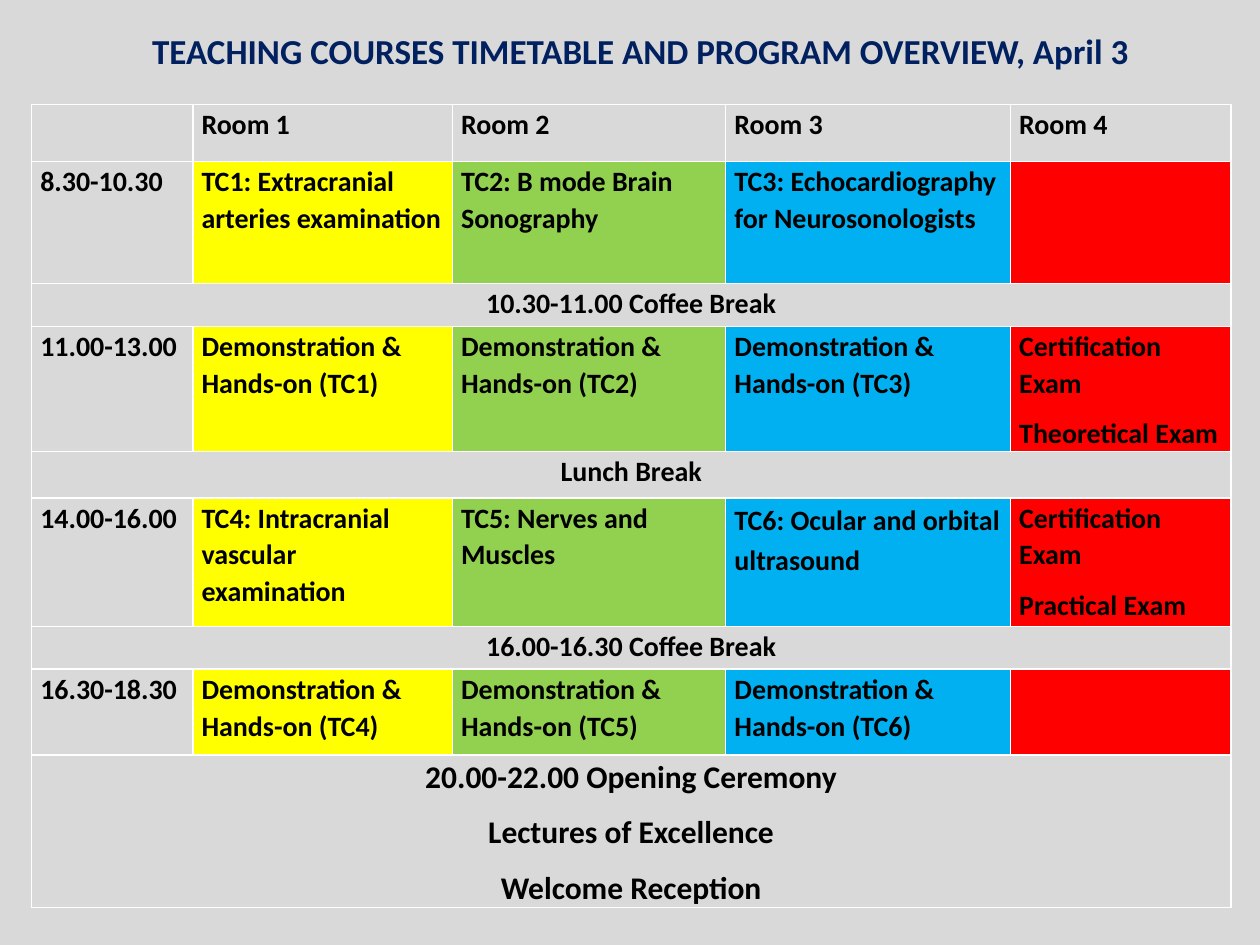
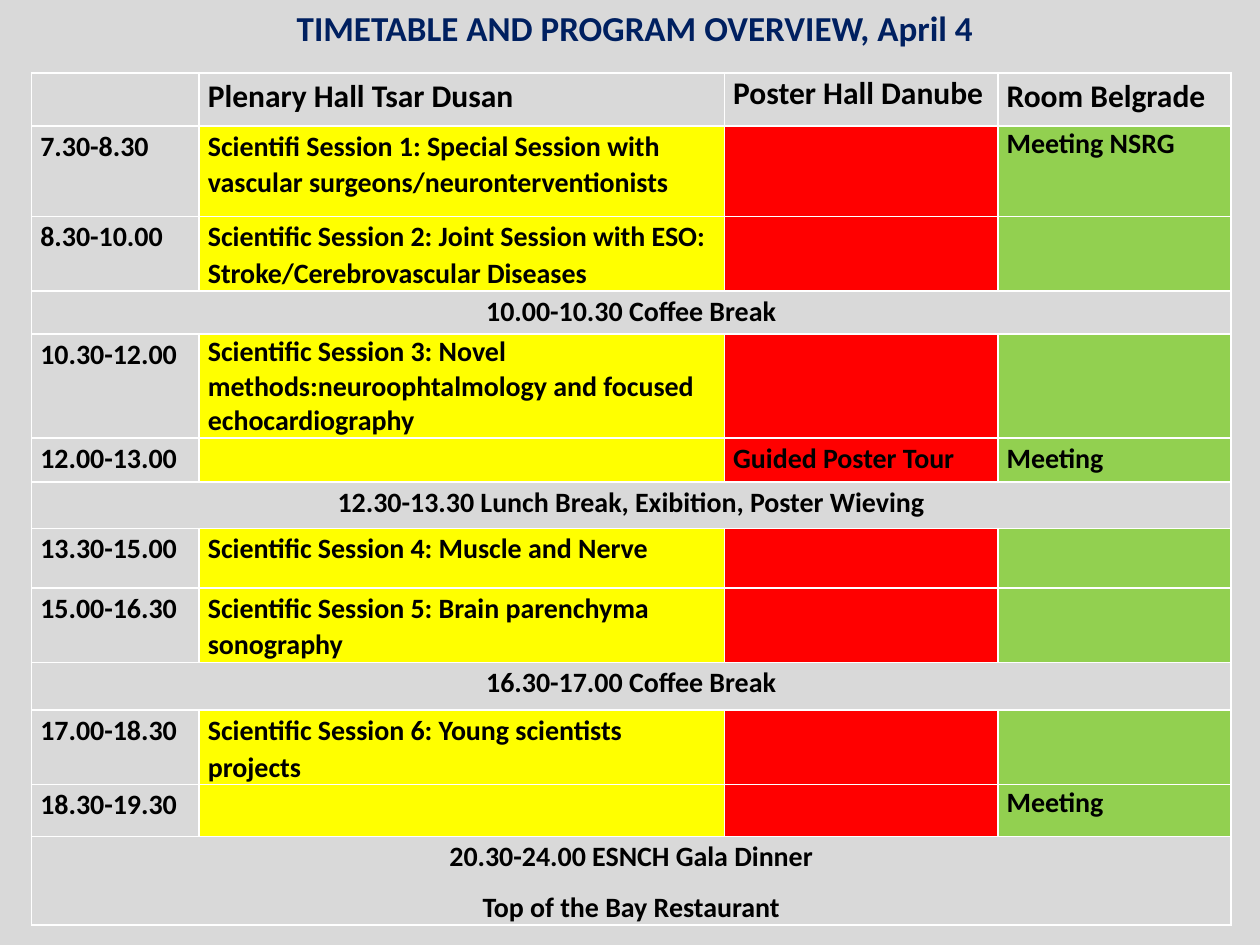
from lxml.etree import SubElement
from pptx import Presentation
from pptx.dml.color import RGBColor
from pptx.enum.text import MSO_ANCHOR, PP_ALIGN
from pptx.oxml.ns import qn
from pptx.util import Inches, Pt

GREY = RGBColor(0xD9, 0xD9, 0xD9)
YELLOW = RGBColor(0xFF, 0xFF, 0x00)
GREEN = RGBColor(0x92, 0xD0, 0x50)
BLUE = RGBColor(0x00, 0xB0, 0xF0)
RED = RGBColor(0xFF, 0x00, 0x00)
NAVY = RGBColor(0x00, 0x20, 0x60)
BLACK = RGBColor(0, 0, 0)
WHITE = RGBColor(0xFF, 0xFF, 0xFF)

FONT = "Calibri"
TEXT_SIZE, TITLE_SIZE = 16, 20
TABLE_LEFT = 0.25
CELL_MARGINS = {"margin_left": Inches(0.07), "margin_right": Inches(0.07),
                "margin_top": Inches(0.01), "margin_bottom": 0}
BODY = {"line_spacing": 1.07, "space_after": Pt(8)}
TIGHT = {"line_spacing": 1.0, "space_after": Pt(0)}
LOOSE = {"line_spacing": 1.15, "space_after": Pt(0)}

# Each row is (height, cells); a row with one cell spans the whole table.
# "\n" separates paragraphs. Sizes and spacings hold the exceptions.
DAYS = [
    {
        "title": "TEACHING COURSES TIMETABLE AND PROGRAM OVERVIEW, April 3",
        "title_box": (1, 0.18, 8.17, 0.44),
        "top": 0.83,
        "columns": [(1.28, GREY), (2.06, YELLOW), (2.17, GREEN), (2.26, BLUE), (1.75, RED)],
        "rows": [
            (0.45, ["", "Room 1", "Room 2", "Room 3", "Room 4"]),
            (0.97, ["8.30-10.30", "TC1: Extracranial arteries examination",
                    "TC2: B mode Brain Sonography",
                    "TC3: Echocardiography for Neurosonologists", ""]),
            (0.34, ["10.30-11.00 Coffee Break"]),
            (0.99, ["11.00-13.00", "Demonstration & Hands-on (TC1)",
                    "Demonstration & Hands-on (TC2)", "Demonstration & Hands-on (TC3)",
                    "Certification Exam\nTheoretical Exam"]),
            (0.37, ["Lunch Break"]),
            (1.02, ["14.00-16.00", "TC4: Intracranial vascular examination",
                    "TC5: Nerves and Muscles", "TC6: Ocular and orbital ultrasound",
                    "Certification Exam\nPractical Exam"]),
            (0.34, ["16.00-16.30 Coffee Break"]),
            (0.68, ["16.30-18.30", "Demonstration & Hands-on (TC4)",
                    "Demonstration & Hands-on (TC5)", "Demonstration & Hands-on (TC6)", ""]),
            (1.21, ["20.00-22.00 Opening Ceremony\nLectures of Excellence\nWelcome Reception"]),
        ],
        "row_sizes": {8: 18},
        "spacings": {(5, 3): LOOSE},
    },
    {
        "title": "TIMETABLE AND PROGRAM OVERVIEW, April 4",
        "title_box": (1.5, 0, 7.08, 0.44),
        "top": 0.58,
        "columns": [(1.33, GREY), (4.17, YELLOW), (2.17, RED), (1.85, GREEN)],
        "rows": [
            (0.42, ["", "Plenary Hall Tsar Dusan", "Poster Hall Danube", "Room Belgrade"]),
            (0.72, ["7.30-8.30", "Scientifi Session 1: Special Session with vascular "
                    "surgeons/neuronterventionists", "", "Meeting NSRG"]),
            (0.58, ["8.30-10.00", "Scientific Session 2: Joint Session with ESO: "
                    "Stroke/Cerebrovascular Diseases", "", ""]),
            (0.34, ["10.00-10.30 Coffee Break"]),
            (0.82, ["10.30-12.00", "Scientific Session 3: Novel methods:neuroophtalmology "
                    "and focused echocardiography", "", ""]),
            (0.35, ["12.00-13.00", "", "Guided Poster Tour", "Meeting"]),
            (0.37, ["12.30-13.30 Lunch Break, Exibition, Poster Wieving"]),
            (0.47, ["13.30-15.00", "Scientific Session 4: Muscle and Nerve", "", ""]),
            (0.58, ["15.00-16.30", "Scientific Session 5: Brain parenchyma sonography", "", ""]),
            (0.38, ["16.30-17.00 Coffee Break"]),
            (0.58, ["17.00-18.30", "Scientific Session 6: Young scientists projects", "", ""]),
            (0.41, ["18.30-19.30", "", "", "Meeting"]),
            (0.7, ["20.30-24.00 ESNCH Gala Dinner\nTop of the Bay Restaurant"]),
        ],
        "row_sizes": {0: 18},
        "spacings": {(0, 2): TIGHT, (1, 3): TIGHT, (4, 1): TIGHT, (11, 3): TIGHT},
    },
]


def apply(target, values):
    for name, value in values.items():
        setattr(target, name, value)


def style_font(font, size, color):
    apply(font, {"name": FONT, "size": Pt(size), "bold": True})
    font.color.rgb = color


def add_title(slide, text, box):
    title = slide.shapes.title
    apply(title, dict(zip(("left", "top", "width", "height"), map(Inches, box))))
    title.text_frame.text = text
    apply(title.text_frame, {"vertical_anchor": MSO_ANCHOR.MIDDLE, "word_wrap": True})
    heading = title.text_frame.paragraphs[0]
    apply(heading, {"alignment": PP_ALIGN.CENTER, "line_spacing": 1.0, "space_before": Pt(0)})
    style_font(heading.runs[0].font, TITLE_SIZE, NAVY)


def add_borders(cell):
    properties = cell._tc.get_or_add_tcPr()
    for side in ("lnL", "lnR", "lnT", "lnB"):
        line = SubElement(properties, qn(f"a:{side}"), w=str(Pt(1)))
        SubElement(SubElement(line, qn("a:solidFill")), qn("a:srgbClr"), val=str(WHITE))


def fill_cell(cell, text, size, spacing, alignment):
    apply(cell, CELL_MARGINS)
    cell.text = text
    for paragraph in cell.text_frame.paragraphs:
        apply(paragraph, {**spacing, "alignment": alignment})
        style_font(paragraph.font, size, BLACK)
        for run in paragraph.runs:
            style_font(run.font, size, BLACK)


def add_timetable(slide, day):
    columns, rows = day["columns"], day["rows"]
    width = sum(column_width for column_width, _ in columns)
    height = sum(row_height for row_height, _ in rows)
    timetable = slide.shapes.add_table(
        len(rows), len(columns), Inches(TABLE_LEFT), Inches(day["top"]),
        Inches(width), Inches(height)).table
    apply(timetable, {"first_row": False, "horz_banding": False})
    for column, (column_width, _) in zip(timetable.columns, columns):
        column.width = Inches(column_width)

    for r, (row_height, texts) in enumerate(rows):
        timetable.rows[r].height = Inches(row_height)
        spans = len(texts) == 1
        for c, (_, color) in enumerate(columns):
            cell = timetable.cell(r, c)
            add_borders(cell)
            if r == 0:
                cell.fill.background()
            else:
                cell.fill.solid()
                cell.fill.fore_color.rgb = GREY if spans else color
        if spans:
            timetable.cell(r, 0).merge(timetable.cell(r, len(columns) - 1))
        for c, text in enumerate(texts):
            fill_cell(timetable.cell(r, c), text,
                      day["row_sizes"].get(r, TEXT_SIZE),
                      day["spacings"].get((r, c), BODY),
                      PP_ALIGN.CENTER if spans else PP_ALIGN.LEFT)


def main():
    deck = Presentation()
    apply(deck, {"slide_width": Inches(10), "slide_height": Inches(7.5)})
    title_only = deck.slide_layouts[5]
    for day in DAYS:
        slide = deck.slides.add_slide(title_only)
        slide.background.fill.solid()
        slide.background.fill.fore_color.rgb = GREY
        add_timetable(slide, day)
        add_title(slide, day["title"], day["title_box"])
    deck.save("out.pptx")


if __name__ == "__main__":
    main()
